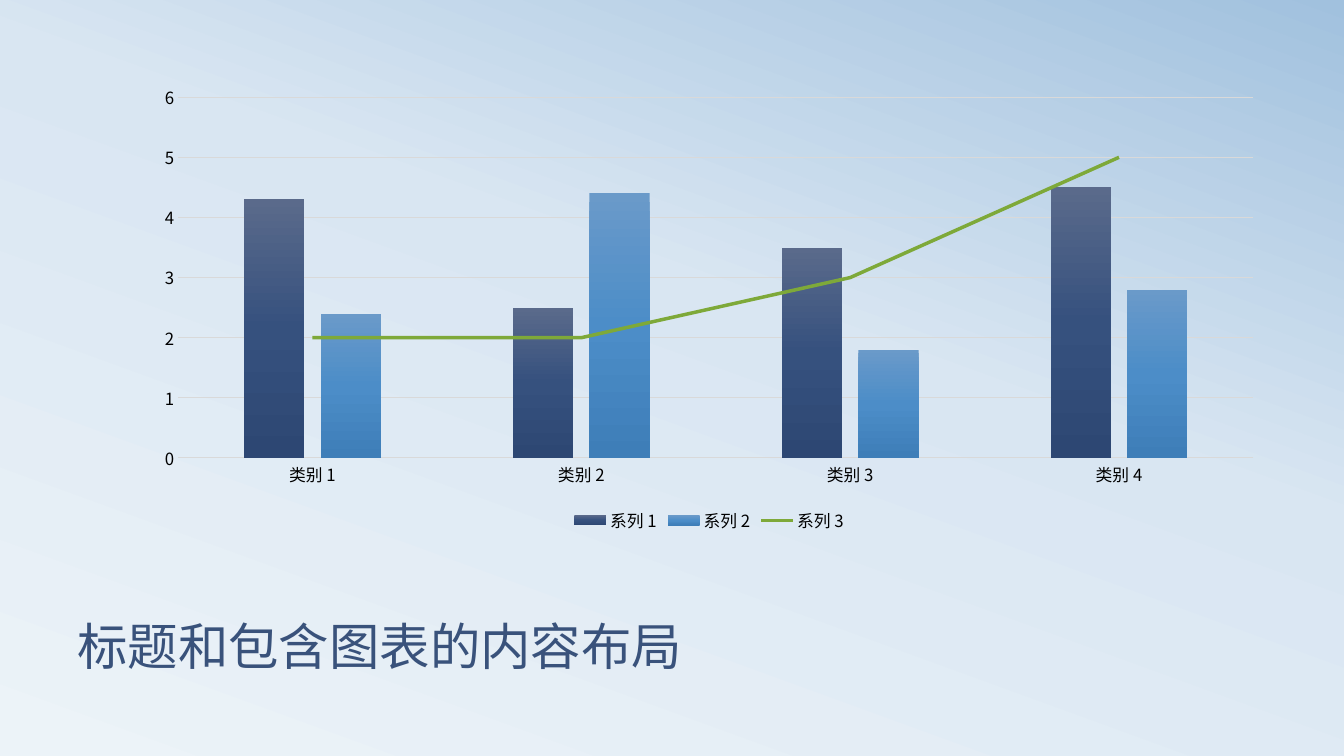
"""Build a slide with a combined column and line chart above its title."""
from lxml.etree import SubElement
from pptx import Presentation
from pptx.chart.data import CategoryChartData
from pptx.dml.color import RGBColor
from pptx.enum.chart import XL_CHART_TYPE as ChartType, XL_LEGEND_POSITION as LegendPosition
from pptx.enum.chart import XL_MARKER_STYLE as MarkerStyle, XL_TICK_MARK as TickMark
from pptx.enum.text import MSO_ANCHOR as Anchor
from pptx.oxml import parse_xml
from pptx.oxml.ns import nsdecls, qn
from pptx.util import Cm, Pt

TITLE = "标题和包含图表的内容布局"
TITLE_BOX = (1.7, 14.17, 30.48, 2.97)
CHART_BOX = (3.58, 1.9, 28.58, 11.63)
CATEGORIES = ["类别 1", "类别 2", "类别 3", "类别 4"]
SERIES = {
    "系列 1": [4.3, 2.5, 3.5, 4.5],
    "系列 2": [2.4, 4.4, 1.8, 2.8],
    "系列 3": [2, 2, 3, 5],
}
BACKGROUND = [(0, "ECF3F8"), (58, "D9E6F2"), (100, "A1C1DE")]
COLUMN_GRADIENTS = [
    [(0, "5A6A8B"), (50, "36517E"), (100, "2D4773")],
    [(0, "6A9AC9"), (50, "4C8DC8"), (100, "3E7EB8")],
]
LINE_COLOR, GRID_COLOR = "7EA939", "D9D9D9"
CJK_FONT = "Noto Sans CJK SC"


def rgb(color):
    return RGBColor.from_string(color)


def style_font(font, size, color="000000", name=CJK_FONT):
    font.size, font.name, font.bold = Pt(size), name, False
    font.color.rgb = rgb(color)
    SubElement(font._element, qn("a:ea")).set("typeface", CJK_FONT)


def style_line(line, color, width):
    line.color.rgb = rgb(color)
    line.width = Pt(width)


def fill_gradient(fill, owner, stops, clockwise_angle):
    fill.gradient()
    fill.gradient_angle = 360 - clockwise_angle
    stop_list = owner.find(".//" + qn("a:gsLst"))
    for stop in list(stop_list):
        stop_list.remove(stop)
    for position, color in stops:
        stop = SubElement(stop_list, qn("a:gs"), pos=str(position * 1000))
        SubElement(stop, qn("a:srgbClr"), val=color)


def add_text(slide, text, box, size, color, line_spacing):
    frame = slide.shapes.add_textbox(*map(Cm, box)).text_frame
    frame.word_wrap = True
    frame.vertical_anchor = Anchor.BOTTOM
    paragraph = frame.paragraphs[0]
    paragraph.line_spacing = line_spacing
    run = paragraph.add_run()
    run.text = text
    style_font(run.font, size, color)


def move_last_series_to_line(chart):
    columns = chart.plots[0]._element
    series = columns.findall(qn("c:ser"))[-1]
    for column_option in series.findall(qn("c:invertIfNegative")):
        series.remove(column_option)
    line_chart = parse_xml(
        f'<c:lineChart {nsdecls("c")}><c:grouping val="standard"/>'
        '<c:varyColors val="0"/><c:marker val="1"/></c:lineChart>'
    )
    line_chart.insert(2, series)
    for axis_id in columns.findall(qn("c:axId")):
        SubElement(line_chart, qn("c:axId"), val=axis_id.get("val"))
    columns.addnext(line_chart)


def add_combined_chart(slide):
    data = CategoryChartData()
    data.categories = CATEGORIES
    for name, values in SERIES.items():
        data.add_series(name, values)
    chart = slide.shapes.add_chart(
        ChartType.COLUMN_CLUSTERED, *map(Cm, CHART_BOX), data
    ).chart
    chart.has_title = False
    style_font(chart.font, 10, "404040", "Cabin")
    move_last_series_to_line(chart)

    columns, lines = chart.plots
    columns.gap_width, columns.overlap = 219, -27
    columns.vary_by_categories = False
    for series, stops in zip(columns.series, COLUMN_GRADIENTS):
        fill_gradient(series.format.fill, series._element, stops, 90)
    trend = lines.series[0]
    trend.smooth = False
    trend.marker.style = MarkerStyle.NONE
    style_line(trend.format.line, LINE_COLOR, 2.5)

    category_axis, value_axis = chart.category_axis, chart.value_axis
    for axis in (category_axis, value_axis):
        axis.major_tick_mark = axis.minor_tick_mark = TickMark.NONE
        style_font(axis.tick_labels.font, 12)
    style_line(category_axis.format.line, GRID_COLOR, 0.75)
    value_axis.format.line.fill.background()
    value_axis.minimum_scale, value_axis.maximum_scale = 0, 6
    value_axis.major_unit = 1
    style_line(value_axis.major_gridlines.format.line, GRID_COLOR, 0.75)

    chart.has_legend = True
    chart.legend.position = LegendPosition.BOTTOM
    chart.legend.include_in_layout = False
    style_font(chart.legend.font, 12)


def main():
    presentation = Presentation()
    presentation.slide_width, presentation.slide_height = Cm(33.87), Cm(19.05)
    slide = presentation.slides.add_slide(presentation.slide_layouts[6])
    fill_gradient(slide.background.fill, slide._element, BACKGROUND, 290)
    add_text(slide, TITLE, TITLE_BOX, size=36, color="39527B", line_spacing=0.8)
    add_combined_chart(slide)
    presentation.save("out.pptx")


if __name__ == "__main__":
    main()
